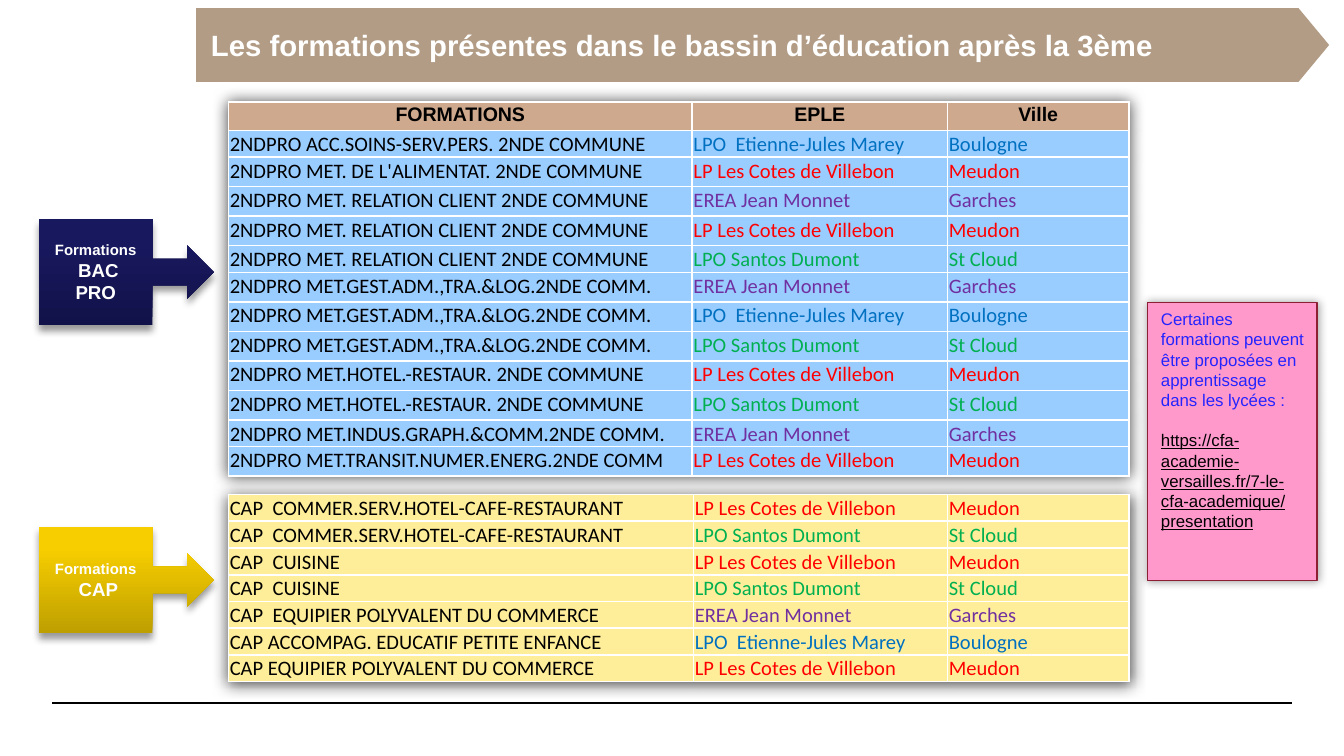
import lxml.etree
import pptx
import pptx.dml.color
import pptx.enum.shapes
import pptx.enum.text
import pptx.oxml.ns
import pptx.util

Inches = pptx.util.Inches
Pt = pptx.util.Pt
qn = pptx.oxml.ns.qn
SHAPES = pptx.enum.shapes.MSO_SHAPE
ALIGN = pptx.enum.text.PP_ALIGN
ANCHOR = pptx.enum.text.MSO_ANCHOR

COLORS = {
    "black": "000000", "white": "FFFFFF", "banner": "B29C85", "header": "CFA98D",
    "bac_row": "99CCFF", "cap_row": "FFEE99",
    "note": "FF99CC", "note_line": "8C1F34", "note_text": "2424FF",
    "blue": "0070C0", "red": "FF0000", "purple": "7030A0", "green": "00B050",
}
BAC_GRADIENT = [(0, "12124A"), (80, "18185F"), (100, "161661")]
CAP_GRADIENT = [(0, "BE9F00"), (80, "F7CE00"), (100, "F8CF00")]

SCHOOLS = {
    "Marey": ("LPO  Etienne-Jules Marey", "Boulogne", "blue"),
    "Villebon": ("LP Les Cotes de Villebon", "Meudon", "red"),
    "Monnet": ("EREA Jean Monnet", "Garches", "purple"),
    "Dumont": ("LPO Santos Dumont", "St Cloud", "green"),
}
HEADINGS = ["FORMATIONS", "EPLE", "Ville"]
BAC_COURSES = [
    ("2NDPRO ACC.SOINS-SERV.PERS. 2NDE COMMUNE", "Marey"),
    ("2NDPRO MET. DE L'ALIMENTAT. 2NDE COMMUNE", "Villebon"),
    ("2NDPRO MET. RELATION CLIENT 2NDE COMMUNE", "Monnet"),
    ("2NDPRO MET. RELATION CLIENT 2NDE COMMUNE", "Villebon"),
    ("2NDPRO MET. RELATION CLIENT 2NDE COMMUNE", "Dumont"),
    ("2NDPRO MET.GEST.ADM.,TRA.&LOG.2NDE COMM.", "Monnet"),
    ("2NDPRO MET.GEST.ADM.,TRA.&LOG.2NDE COMM.", "Marey"),
    ("2NDPRO MET.GEST.ADM.,TRA.&LOG.2NDE COMM.", "Dumont"),
    ("2NDPRO MET.HOTEL.-RESTAUR. 2NDE COMMUNE", "Villebon"),
    ("2NDPRO MET.HOTEL.-RESTAUR. 2NDE COMMUNE", "Dumont"),
    ("2NDPRO MET.INDUS.GRAPH.&COMM.2NDE COMM.", "Monnet"),
    ("2NDPRO MET.TRANSIT.NUMER.ENERG.2NDE COMM", "Villebon"),
]
CAP_COURSES = [
    ("CAP  COMMER.SERV.HOTEL-CAFE-RESTAURANT", "Villebon"),
    ("CAP  COMMER.SERV.HOTEL-CAFE-RESTAURANT", "Dumont"),
    ("CAP  CUISINE", "Villebon"),
    ("CAP  CUISINE", "Dumont"),
    ("CAP  EQUIPIER POLYVALENT DU COMMERCE", "Monnet"),
    ("CAP ACCOMPAG. EDUCATIF PETITE ENFANCE", "Marey"),
    ("CAP EQUIPIER POLYVALENT DU COMMERCE", "Villebon"),
]
SHORT_BAC_ROWS = (1, 5, 11)


def rgb(name):
    return pptx.dml.color.RGBColor.from_string(COLORS[name])


def add_text(paragraph, text, size=11, color="black", font="Arial", bold=False,
             underline=False, align=ALIGN.LEFT):
    paragraph.alignment = align
    run = paragraph.add_run()
    run.text = text
    run.font.name = font
    run.font.size = Pt(size)
    run.font.bold = bold
    run.font.underline = underline
    run.font.color.rgb = rgb(color)


def add_shadow(effects, blur, distance=0, direction=0, opacity=40):
    """Put a black outer shadow in an a:effectLst element."""
    shadow = lxml.etree.SubElement(
        effects, qn("a:outerShdw"), blurRad=str(Pt(blur)), dist=str(Pt(distance)),
        dir=str(direction * 60000), algn="ctr", rotWithShape="0")
    color = lxml.etree.SubElement(shadow, qn("a:srgbClr"), val=COLORS["black"])
    lxml.etree.SubElement(color, qn("a:alpha"), val=str(opacity * 1000))


def add_box(slide, kind, box):
    shape = slide.shapes.add_shape(kind, *map(Inches, box))
    shape.shadow.inherit = False
    shape.line.fill.background()
    shape.text_frame.word_wrap = True
    return shape


def shape_effects(shape):
    return shape._element.spPr.find(qn("a:effectLst"))


def add_banner(slide, box, title):
    banner = add_box(slide, SHAPES.PENTAGON, box)
    banner.adjustments[0] = 0.415
    banner.fill.solid()
    banner.fill.fore_color.rgb = rgb("banner")
    frame = banner.text_frame
    frame.margin_left = frame.margin_right = Inches(0.11)
    frame.vertical_anchor = ANCHOR.MIDDLE
    add_text(frame.paragraphs[0], title, size=15.7, color="white", bold=True,
             align=ALIGN.JUSTIFY)


def add_callout(slide, box, label, gradient):
    callout = add_box(slide, SHAPES.RIGHT_ARROW_CALLOUT, box)
    callout.fill.gradient()
    callout.fill.gradient_angle = 90
    stops = callout._element.spPr.find(".//" + qn("a:gsLst"))
    for stop in list(stops):
        stops.remove(stop)
    for position, color in gradient:
        stop = lxml.etree.SubElement(stops, qn("a:gs"), pos=str(position * 1000))
        lxml.etree.SubElement(stop, qn("a:srgbClr"), val=color)
    add_shadow(shape_effects(callout), 4, 3, 90)
    callout.text_frame.vertical_anchor = ANCHOR.MIDDLE
    paragraph = callout.text_frame.paragraphs[0]
    style = {"color": "white", "bold": True, "align": ALIGN.CENTER}
    add_text(paragraph, "Formations", size=8, **style)
    paragraph.add_line_break()
    add_text(paragraph, " " + label, size=10, **style)


def fill_cell(cell, text, fill, **style):
    cell.margin_left = cell.margin_right = cell.margin_top = Inches(0.01)
    cell.margin_bottom = 0
    cell.fill.solid()
    cell.fill.fore_color.rgb = rgb(fill)
    properties = cell._tc.get_or_add_tcPr()
    for index, side in enumerate(("a:lnL", "a:lnR", "a:lnT", "a:lnB")):
        border = lxml.etree.Element(qn(side), w=str(Pt(1)))
        solid = lxml.etree.SubElement(border, qn("a:solidFill"))
        lxml.etree.SubElement(solid, qn("a:srgbClr"), val=COLORS["white"])
        properties.insert(index, border)
    add_text(cell.text_frame.paragraphs[0], text, **style)


def add_course_table(slide, box, widths, heights, courses, fill, headings=None):
    first = 1 if headings else 0
    table = slide.shapes.add_table(len(heights), len(widths), *map(Inches, box)).table
    table.first_row = bool(headings)
    table.horz_banding = False
    effects = lxml.etree.Element(qn("a:effectLst"))
    table._tbl.tblPr.insert(0, effects)
    add_shadow(effects, 8, opacity=70)
    for column, width in zip(table.columns, widths):
        column.width = Inches(width)
    for row, height in zip(table.rows, heights):
        row.height = Inches(height)
    for column, heading in enumerate(headings or []):
        fill_cell(table.cell(0, column), heading, "header", size=10.5, bold=True,
                  align=ALIGN.CENTER)
    for row, (course, key) in enumerate(courses, first):
        school, town, color = SCHOOLS[key]
        for column, text in enumerate((course, school, town)):
            fill_cell(table.cell(row, column), text, fill, font="Calibri",
                      color=color if column else "black")


def add_note(slide, box, message, address):
    note = add_box(slide, SHAPES.RECTANGLE, box)
    note.fill.solid()
    note.fill.fore_color.rgb = rgb("note")
    note.line.color.rgb = rgb("note_line")
    note.line.width = Pt(0.75)
    add_shadow(shape_effects(note), 5)
    frame = note.text_frame
    frame.vertical_anchor = ANCHOR.TOP
    add_text(frame.paragraphs[0], message, size=9, color="note_text")
    paragraph = frame.add_paragraph()
    paragraph.space_before = Pt(10.8)
    add_text(paragraph, address, size=9, underline=True)


def add_footer_line(slide, left, right, top):
    line = slide.shapes.add_connector(
        pptx.enum.shapes.MSO_CONNECTOR.STRAIGHT,
        Inches(left), Inches(top), Inches(right), Inches(top))
    line.line.color.rgb = rgb("black")
    line.line.width = Pt(0.8)
    lxml.etree.SubElement(line._element.spPr, qn("a:effectLst"))


def main():
    presentation = pptx.Presentation()
    presentation.slide_width = Inches(10)
    presentation.slide_height = presentation.slide_width * 9 // 16
    slide = presentation.slides.add_slide(presentation.slide_layouts[6])

    add_footer_line(slide, 0.39, 9.61, 5.23)
    bac_heights = [0.21] + [0.15 if row in SHORT_BAC_ROWS else 0.22
                            for row in range(1, len(BAC_COURSES) + 1)]
    add_course_table(slide, (1.7, 0.76, 6.7, 2.77), (3.45, 1.9, 1.35), bac_heights,
                     BAC_COURSES, "bac_row", HEADINGS)
    add_banner(slide, (1.46, 0.06, 8.43, 0.55),
               "Les formations présentes dans le bassin d’éducation après la 3ème")
    add_callout(slide, (0.29, 1.63, 1.3, 0.79), "BAC PRO", BAC_GRADIENT)
    add_course_table(slide, (1.7, 3.68, 6.7, 1.36), (3.46, 1.89, 1.35),
                     [0.17] * len(CAP_COURSES), CAP_COURSES, "cap_row")
    add_callout(slide, (0.29, 3.92, 1.3, 0.79), "CAP", CAP_GRADIENT)
    add_note(slide, (8.54, 2.25, 1.26, 2.07),
             "Certaines formations peuvent être proposées en apprentissage "
             "dans les lycées :",
             "https://cfa-academie-versailles.fr/7-le-cfa-academique/presentation")
    presentation.save("out.pptx")


if __name__ == "__main__":
    main()
